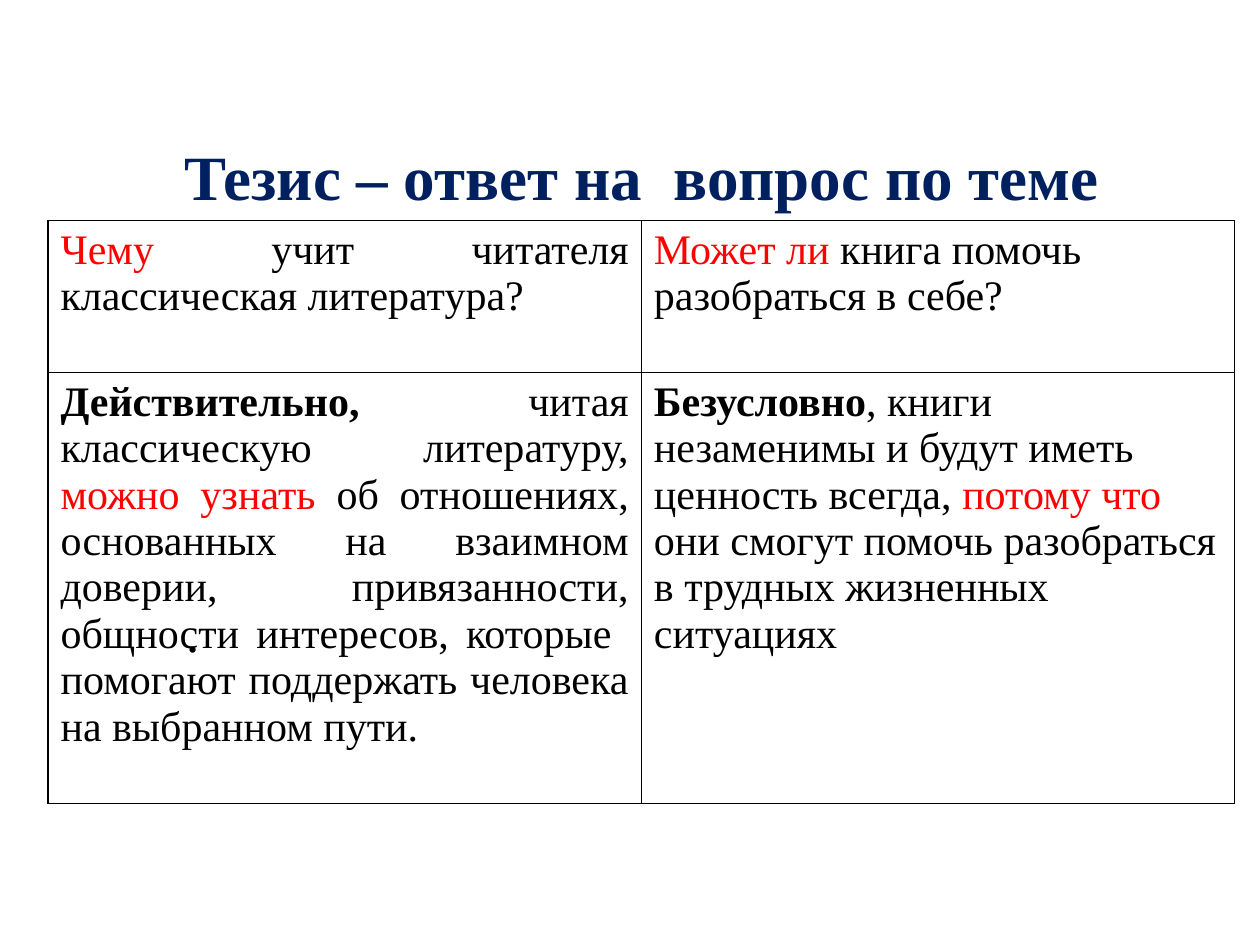
"""Build a slide with a heading and a two-column table of questions and thesis answers."""
from lxml.etree import SubElement
from pptx import Presentation
from pptx.dml.color import RGBColor
from pptx.enum.text import PP_ALIGN
from pptx.oxml.ns import qn
from pptx.util import Pt

COLORS = {"title": "002060", "accent": "FF0000", "text": "000000", "border": "000000"}
FONT = "Times New Roman"
LEFT, WIDTH = 27.4, 678.2
ROW_HEIGHTS = [86.9, 246.4]
ALIGNMENTS = [PP_ALIGN.JUSTIFY, PP_ALIGN.LEFT]
CELLS = [
    [
        [("Чему", "accent", False),
         (" учит читателя классическая литература? ", "text", False)],
        [("Может ли ", "accent", False),
         ("книга помочь разобраться в себе?", "text", False)],
    ],
    [
        [("Действительно,", "text", True),
         (" читая классическую литературу, ", "text", False),
         ("можно узнать ", "accent", False),
         ("об отношениях, основанных на взаимном доверии, привязанности, общности "
          "интересов, которые  помогают поддержать человека на выбранном пути. ",
          "text", False)],
        [("Безусловно", "text", True),
         (", книги незаменимы и будут иметь ценность всегда, ", "text", False),
         ("потому что ", "accent", False),
         ("они смогут помочь разобраться в трудных жизненных ситуациях", "text", False)],
    ],
]


def set_font(font, size, color, bold=False):
    font.name = FONT
    font.size = Pt(size)
    font.bold = bold
    font.color.rgb = RGBColor.from_string(COLORS[color])


def add_borders(cell):
    tcPr = cell._tc.get_or_add_tcPr()
    for i, side in enumerate(("lnL", "lnR", "lnT", "lnB")):
        ln = tcPr.makeelement(qn(f"a:{side}"), {"w": str(Pt(1))})
        fill = SubElement(ln, qn("a:solidFill"))
        SubElement(fill, qn("a:srgbClr"), val=COLORS["border"])
        tcPr.insert(i, ln)


prs = Presentation()
prs.slide_width, prs.slide_height = Pt(720), Pt(540)
s = prs.slides.add_slide(prs.slide_layouts[6])

sp = s.shapes.add_textbox(Pt(LEFT), Pt(44.8), Pt(WIDTH), Pt(447))
tf = sp.text_frame
tf.word_wrap = True
p = tf.paragraphs[0]
p.text = "Тезис – ответ на  вопрос по теме"
p.alignment = PP_ALIGN.CENTER
p.line_spacing = 1.7
set_font(p.font, 36, "title", True)

p = tf.add_paragraph()
p.text = "."
p.line_spacing = 1.7
p.space_before = Pt(196)
p._p.get_or_add_pPr().set("marL", str(Pt(72)))
set_font(p.font, 30, "text")

table = s.shapes.add_table(2, 2, Pt(LEFT), Pt(126), Pt(WIDTH), Pt(sum(ROW_HEIGHTS))).table
table.first_row = table.horz_banding = False
for row, height, contents in zip(table.rows, ROW_HEIGHTS, CELLS):
    row.height = Pt(height)
    for cell, runs, alignment in zip(row.cells, contents, ALIGNMENTS):
        cell.fill.background()
        add_borders(cell)
        p = cell.text_frame.paragraphs[0]
        p.alignment = alignment
        for text, color, bold in runs:
            r = p.add_run()
            r.text = text
            set_font(r.font, 24, color, bold)

prs.save("out.pptx")
